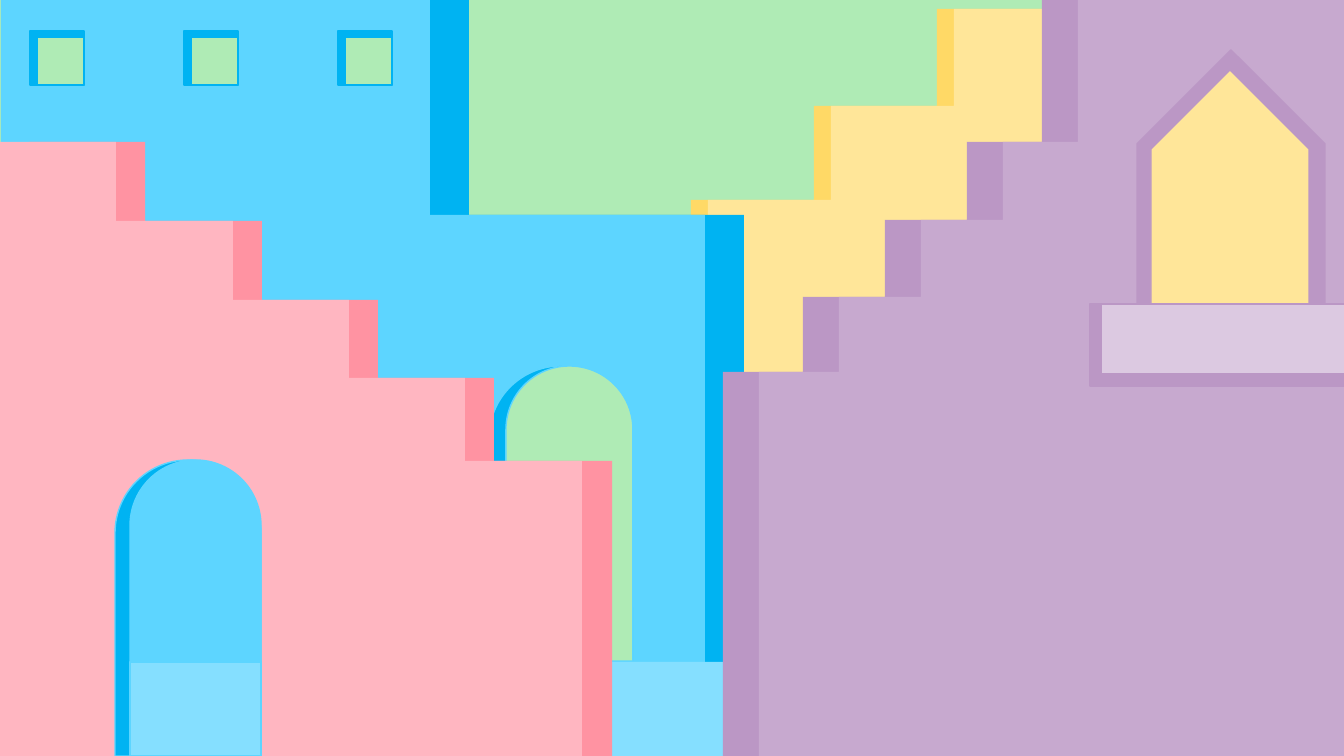
from pptx import Presentation
from pptx.dml.color import RGBColor
from pptx.enum.shapes import MSO_SHAPE as Kind
from pptx.util import Inches, Pt

WIDE, HIGH = 1344, 756
PX = Inches(7.5) / HIGH

HUES = {
    "mint": "AFEBB5", "gold": "FFD966", "cream": "FFE699",
    "deep": "00B3F2", "sky": "5DD5FF", "pale": "85DFFF",
    "rose": "FF93A2", "pink": "FFB6C1",
    "plum": "BB97C5", "lilac": "C7A9CF", "mist": "DCC9E1",
}

# Treads are (left, top); ends are the right edges of shade and face.
WALLS = {
    "yellow": dict(treads=[(568, 301), (691, 200), (814, 106), (937, 9), (1059, -88)],
                   ends=(1182, 1338), shift=17, base=661, hues=("gold", "cream")),
    "blue": dict(treads=[(40, 0), (469, 215)],
                 ends=(744, 705), shift=-39, base=662, hues=("deep", "sky")),
    "pink": dict(treads=[(29, 142), (145, 221), (262, 300), (378, 378), (494, 461)],
                 ends=(612, 582), shift=-29, base=756, hues=("rose", "pink")),
    "purple": dict(treads=[(723, 372), (803, 297), (885, 220), (967, 142), (1042, 0)],
                   ends=(1397, 1433), shift=36, base=756, hues=("plum", "lilac")),
}

BOX, ARCH, GABLE = Kind.RECTANGLE, Kind.ROUND_2_SAME_RECTANGLE, Kind.SNIP_2_SAME_RECTANGLE

# Each part: kind, (left, top, width, height), fill, line
PARTS = {
    "yellow": [],
    "blue": [
        (ARCH, (489, 366, 144, 295), "deep", "sky"),
        (ARCH, (506, 366, 127, 295), "mint", "sky"),
        (BOX, (0, 662, WIDE, 94), "pale", None),
    ],
    "pink": [
        (ARCH, (115, 460, 146, 296), "deep", "sky"),
        (ARCH, (130, 460, 131, 202), "sky", "sky"),
        (BOX, (130, 662, 131, 94), "pale", "sky"),
    ],
    "purple": [
        (GABLE, (1137, 50, 188, 254), "plum", "plum"),
        (GABLE, (1151, 70, 158, 234), "cream", "plum"),
        (BOX, (1090, 304, 277, 82), "plum", "plum"),
        (BOX, (1101, 304, 266, 70), "mist", "plum"),
    ],
}
PANES = dict(left=30, gap=154, count=3)


def color(name):
    return RGBColor.from_string(HUES[name])


def paint(shape, fill, line=None):
    shape.shadow.inherit = False
    shape.fill.solid()
    shape.fill.fore_color.rgb = color(fill)
    if line:
        shape.line.color.rgb = color(line)
        shape.line.width = Pt(1)
    else:
        shape.line.fill.background()


def add_part(slide, kind, box, fill, line):
    shape = slide.shapes.add_shape(kind, *(round(v * PX) for v in box))
    if kind != BOX:
        shape.adjustments[0] = 0.5
        shape.adjustments[1] = 0
    paint(shape, fill, line)


def add_steps(slide, treads, end, base, fill):
    """Draw a wall whose top follows the treads."""
    lefts = [x for x, _ in treads]
    points = []
    for (x, y), right in zip(treads, lefts[1:] + [end]):
        points += [(x, y), (right, y)]
    pen = slide.shapes.build_freeform(lefts[0], base, scale=PX)
    pen.add_line_segments(points + [(end, base)], close=True)
    paint(pen.convert_to_shape(), fill)


def add_wall(slide, treads, ends, shift, base, hues):
    """Draw the shade, then the face moved sideways over it."""
    for move, end, hue in zip((0, shift), ends, hues):
        add_steps(slide, [(x + move, y) for x, y in treads], end, base, hue)


def add_panes(slide, left, gap, count):
    for i in range(count):
        x = left + i * gap
        add_part(slide, BOX, (x, 31, 54, 54), "deep", "deep")
        add_part(slide, BOX, (x + 7, 37, 47, 48), "mint", "deep")


def main():
    deck = Presentation()
    deck.slide_width, deck.slide_height = round(WIDE * PX), round(HIGH * PX)
    slide = deck.slides.add_slide(deck.slide_layouts[6])
    slide.background.fill.solid()
    slide.background.fill.fore_color.rgb = color("mint")
    for name, wall in WALLS.items():
        add_wall(slide, **wall)
        if name == "blue":
            add_panes(slide, **PANES)
        for part in PARTS[name]:
            add_part(slide, *part)
    deck.save("out.pptx")


if __name__ == "__main__":
    main()
